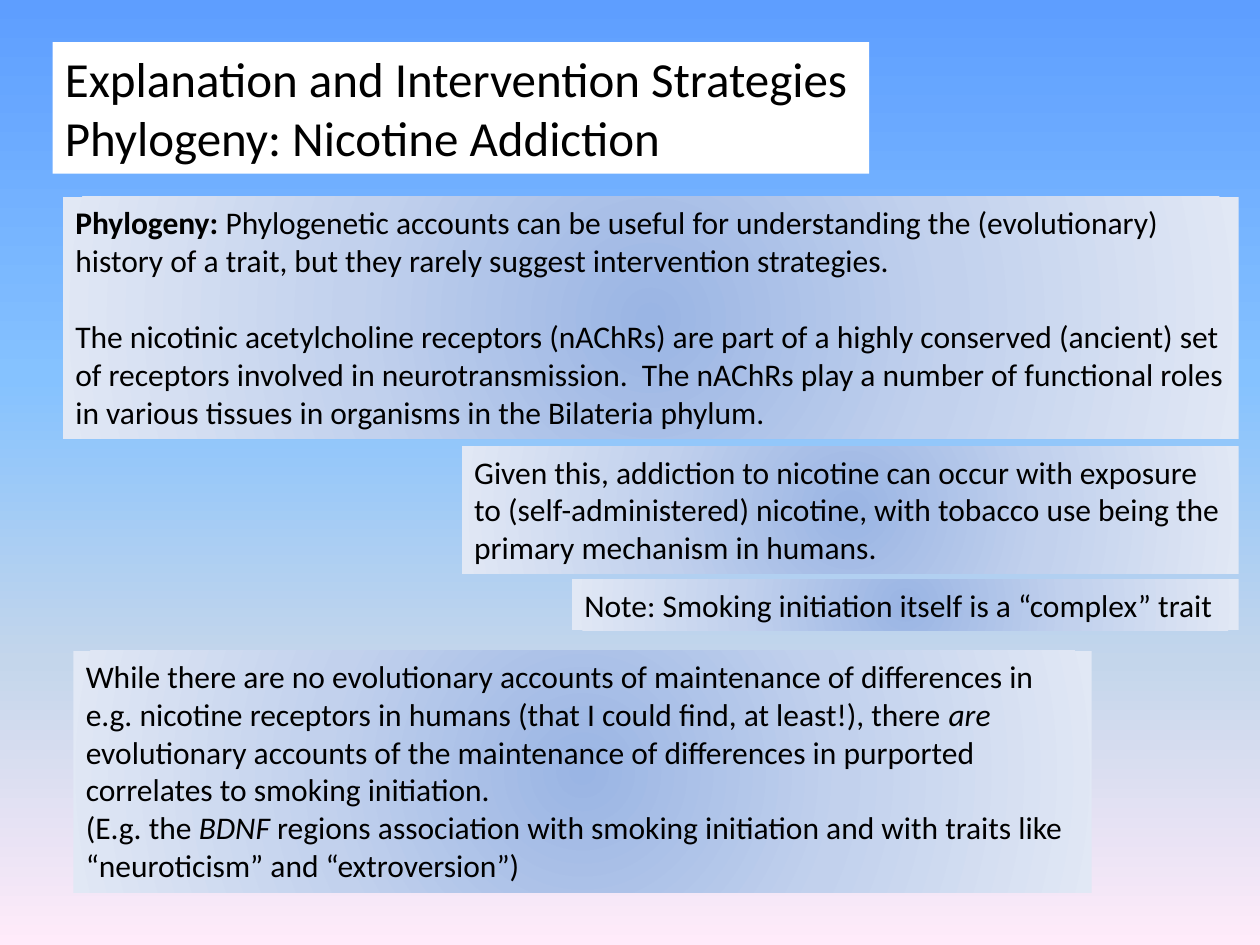
from dataclasses import dataclass

from lxml.etree import SubElement
from pptx import Presentation
from pptx.dml.color import RGBColor
from pptx.enum.text import MSO_AUTO_SIZE
from pptx.oxml.ns import qn
from pptx.util import Cm, Pt


@dataclass(frozen=True)
class Theme:
    font: str = "Calibri"
    title_size: int = 28
    body_size: int = 18
    text: str = "000000"
    title_fill: str = "FFFFFF"
    sky: tuple = ((0, "5E9EFF"), (40, "85C2FF"), (70, "C4D6EB"), (100, "FFEBFA"))
    panel: tuple = ((0, "9AB5E4"), (50, "C2D1ED"), (100, "E1E8F5"))


def set_gradient(fill, element, stops, radial=False):
    """Give fill the (percent, colour) stops, running down or out from the centre."""
    fill.gradient()
    gradient = element.find(".//" + qn("a:gradFill"))
    for child in list(gradient):
        gradient.remove(child)
    stop_list = SubElement(gradient, qn("a:gsLst"))
    for percent, color in stops:
        stop = SubElement(stop_list, qn("a:gs"), pos=str(percent * 1000))
        SubElement(stop, qn("a:srgbClr"), val=color)
    if radial:
        circle = SubElement(gradient, qn("a:path"), path="circle")
        SubElement(circle, qn("a:fillToRect"), l="50000", t="50000", r="50000", b="50000")
    else:
        SubElement(gradient, qn("a:lin"), ang="5400000", scaled="0")


def add_run(paragraph, text, *, font, size, color, bold=False, italic=False):
    run = paragraph.add_run()
    run.text = text
    run.font.name = font
    run.font.size = Pt(size)
    run.font.color.rgb = RGBColor.from_string(color)
    run.font.bold = bold
    run.font.italic = italic


class SlideBuilder:
    def __init__(self, slide, theme):
        self.slide = slide
        self.theme = theme

    def background(self):
        set_gradient(self.slide.background.fill, self.slide.element, self.theme.sky)

    def text_box(self, left, top, width, height, paragraphs, size, wrap=True, gap=0):
        """Each paragraph is a list of (text, format) runs; gap is in points."""
        shape = self.slide.shapes.add_textbox(Cm(left), Cm(top), Cm(width), Cm(height))
        frame = shape.text_frame
        frame.word_wrap = wrap
        frame.auto_size = MSO_AUTO_SIZE.SHAPE_TO_FIT_TEXT
        for index, runs in enumerate(paragraphs):
            paragraph = frame.add_paragraph() if index else frame.paragraphs[0]
            if index and gap:
                paragraph.space_before = Pt(gap)
            for text, style in runs:
                add_run(paragraph, text, font=self.theme.font, size=size,
                        color=self.theme.text, **style)
        return shape

    def title(self, left, top, width, height, lines):
        paragraphs = [[(line, PLAIN)] for line in lines]
        shape = self.text_box(left, top, width, height, paragraphs,
                              self.theme.title_size, wrap=False)
        shape.fill.solid()
        shape.fill.fore_color.rgb = RGBColor.from_string(self.theme.title_fill)

    def panel(self, left, top, width, height, paragraphs, **layout):
        shape = self.text_box(left, top, width, height, paragraphs,
                              self.theme.body_size, **layout)
        set_gradient(shape.fill, shape.element, self.theme.panel, radial=True)


PLAIN = {}
BOLD = {"bold": True}
ITALIC = {"italic": True}

PHYLOGENY = [
    [("Phylogeny: ", BOLD),
     ("Phylogenetic accounts can be useful for understanding the (evolutionary) "
      "history of a trait, but they rarely suggest intervention strategies.", PLAIN)],
    [("The nicotinic acetylcholine receptors (nAChRs) are part of a highly conserved "
      "(ancient) set of receptors involved in neurotransmission.  The nAChRs play a "
      "number of functional roles in various tissues in organisms in the Bilateria "
      "phylum.", PLAIN)],
]
EXPOSURE = [
    [("Given this, addiction to nicotine can occur with exposure to (self-administered) "
      "nicotine, with tobacco use being the primary mechanism in humans.", PLAIN)],
]
NOTE = [[("Note: Smoking initiation itself is a “complex” trait", PLAIN)]]
CORRELATES = [
    [("While there are no evolutionary accounts of maintenance of differences in e.g. "
      "nicotine receptors in humans (that I could find, at least!), there ", PLAIN),
     ("are", ITALIC),
     (" evolutionary accounts of the maintenance of differences in purported "
      "correlates to smoking initiation.", PLAIN)],
    [("(E.g. the ", PLAIN),
     ("BDNF", ITALIC),
     (" regions association with smoking initiation and with traits like "
      "“neuroticism” and “extroversion”)", PLAIN)],
]


def main():
    presentation = Presentation()
    presentation.slide_width = Cm(25.4)
    presentation.slide_height = Cm(19.05)
    slide = presentation.slides.add_slide(presentation.slide_layouts[6])

    builder = SlideBuilder(slide, Theme())
    builder.background()
    builder.panel(1.27, 3.97, 23.7, 4.88, PHYLOGENY, gap=22)
    builder.panel(9.31, 9, 15.66, 2.57, EXPOSURE)
    builder.panel(11.53, 11.68, 13.44, 1.03, NOTE, wrap=False)
    builder.panel(1.48, 13.12, 20.53, 4.88, CORRELATES)
    builder.title(1.06, 0.85, 16.46, 2.65, ["Explanation and Intervention Strategies",
                                            "Phylogeny: Nicotine Addiction"])
    presentation.save("out.pptx")


if __name__ == "__main__":
    main()
